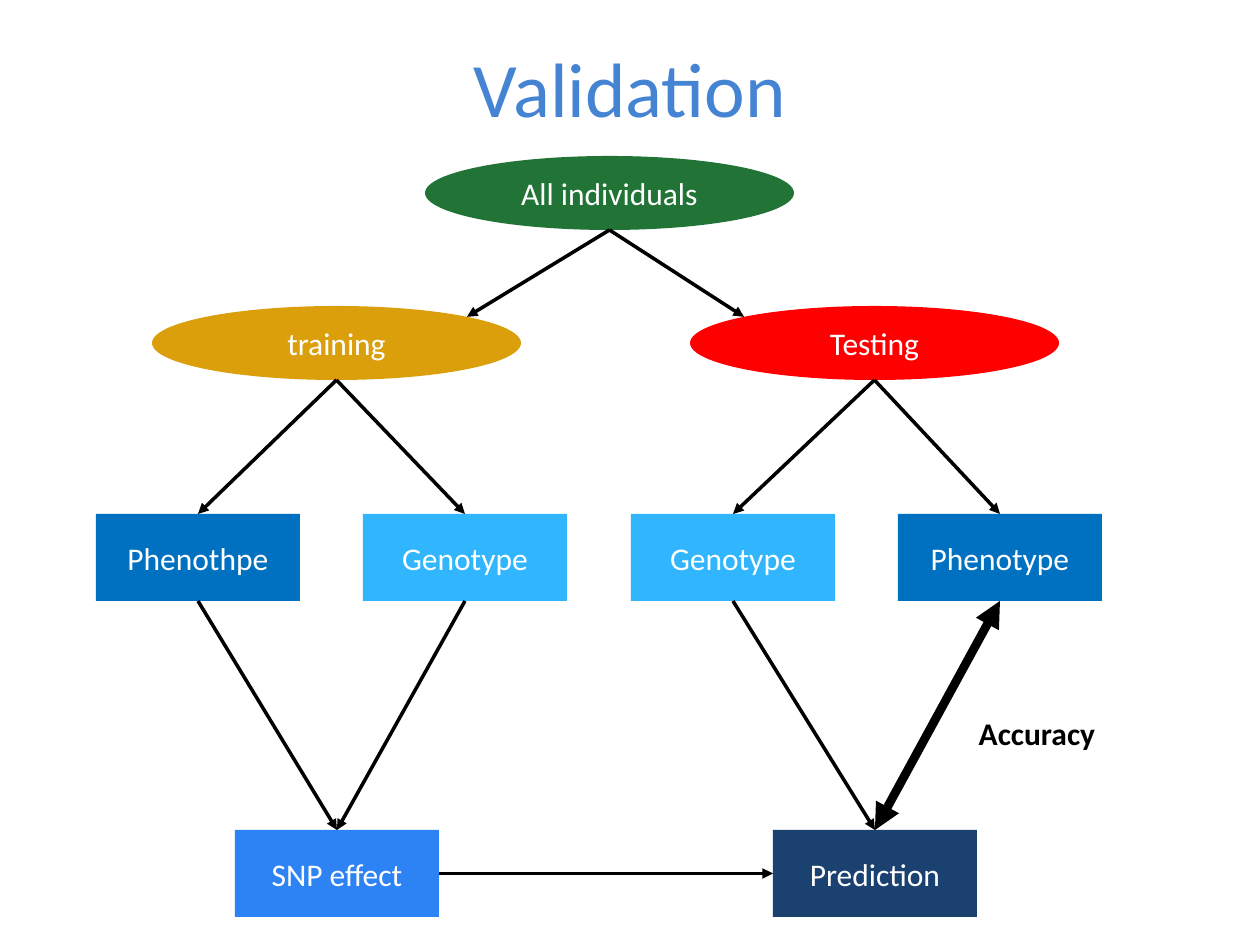
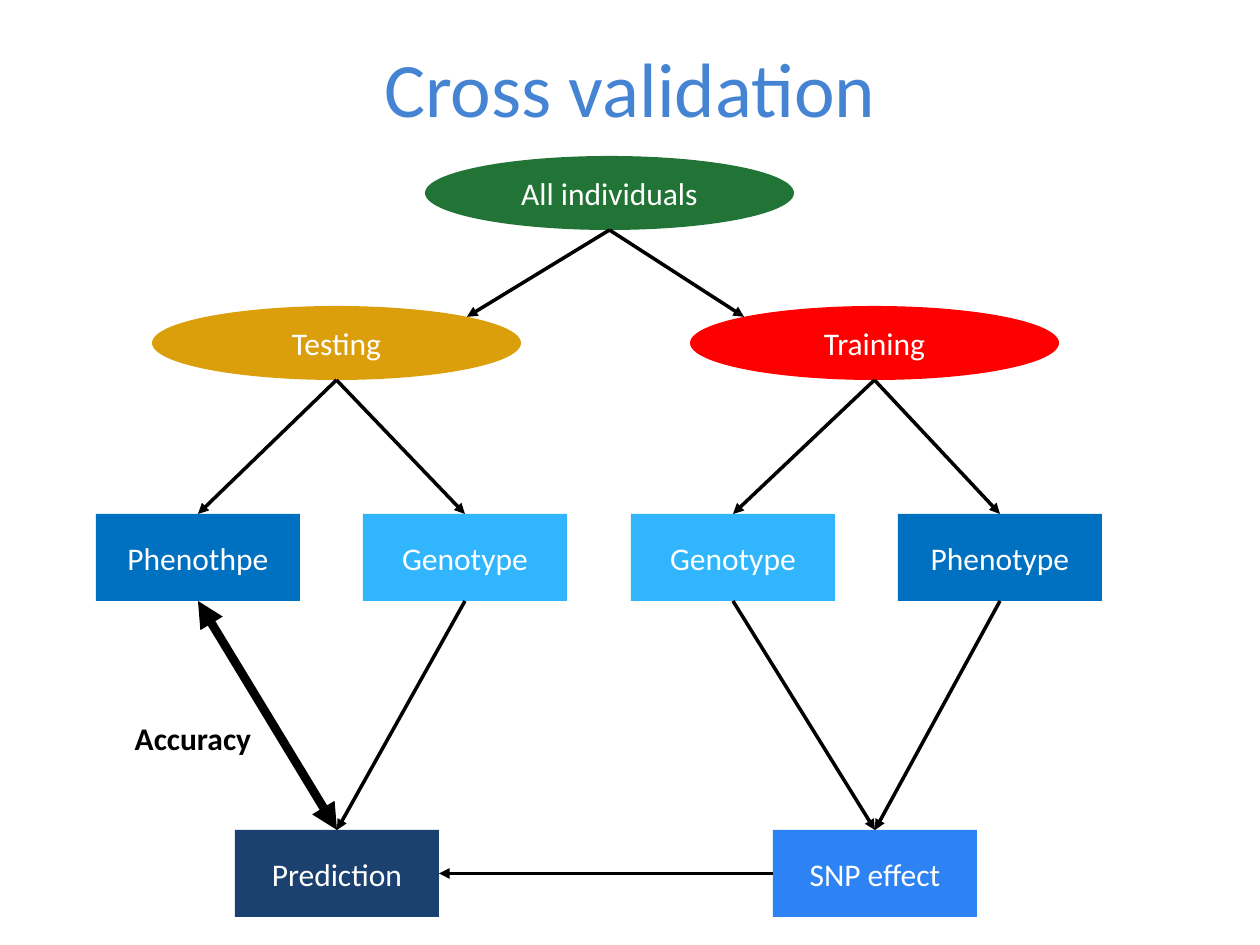
from math import sqrt

from pptx import Presentation
from pptx.dml.color import RGBColor
from pptx.enum.shapes import MSO_CONNECTOR as Link, MSO_SHAPE as Preset
from pptx.enum.text import MSO_ANCHOR as Anchor, PP_ALIGN as Align
from pptx.oxml.ns import qn
from pptx.oxml.xmlchemy import OxmlElement
from pptx.util import Emu, Pt

EMU_PER_PX = 914400 / 126
FONT = "Calibri"
BLACK, WHITE, TITLE_BLUE = "000000", "FFFFFF", "4584D3"
GREEN, GOLD, RED = "217436", "DC9F0C", "FF0000"
PHENOTYPE_BLUE, GENOTYPE_BLUE = "0070C0", "31B6FD"
STEP_FILLS = {"SNP effect": "2D83F4", "Prediction": "1B4171"}

GROUP_SIZE = (369, 74)
BOX_SIZE = (204, 87)
BRANCH_GAP = 538  # from the left branch to the right branch
DATA_PITCH = 267.3  # from one data box to the next
TOP, LEFT, BOTTOM, RIGHT = range(4)


def px(length):
    return Emu(round(length * EMU_PER_PX))


def color(hex_string):
    return RGBColor.from_string(hex_string)


def write(shape, text, size=18, fill=WHITE, bold=False, anchor=Anchor.MIDDLE):
    frame = shape.text_frame
    frame.word_wrap = True
    frame.vertical_anchor = anchor
    paragraph = frame.paragraphs[0]
    paragraph.alignment = Align.CENTER
    run = paragraph.add_run()
    run.text = text
    run.font.name = FONT
    run.font.size = Pt(size)
    run.font.bold = bold
    run.font.color.rgb = color(fill)


def add_label(slide, text, box, **text_format):
    write(slide.shapes.add_textbox(*map(px, box)), text, **text_format)


def add_node(slide, preset, text, position, size, fill):
    node = slide.shapes.add_shape(preset, *map(px, (*position, *size)))
    node.shadow.inherit = False
    node.fill.solid()
    node.fill.fore_color.rgb = color(fill)
    node.line.fill.background()
    write(node, text)
    return node


def add_group(slide, text, x, y, fill):
    return add_node(slide, Preset.OVAL, text, (x, y), GROUP_SIZE, fill)


def add_box(slide, text, x, y, fill):
    return add_node(slide, Preset.RECTANGLE, text, (x, y), BOX_SIZE, fill)


def oval_point(oval, across, down):
    """Point at the given share of the half width and half height from the centre."""
    return (Emu(round(oval.left + oval.width * (1 + across) / 2)),
            Emu(round(oval.top + oval.height * (1 + down) / 2)))


def add_arrow(slide, start, end, width=2, both_ends=False):
    """Each end is either an (x, y) point or a (box, side) pair."""
    arrow = slide.shapes.add_connector(Link.STRAIGHT, 0, 0, 0, 0)
    if isinstance(start[0], int):
        arrow.begin_x, arrow.begin_y = start
    else:
        arrow.begin_connect(*start)
    if isinstance(end[0], int):
        arrow.end_x, arrow.end_y = end
    else:
        arrow.end_connect(*end)
    arrow.line.color.rgb = color(BLACK)
    arrow.line.width = Pt(width)
    properties = arrow._element.spPr
    for tag in ("a:headEnd", "a:tailEnd") if both_ends else ("a:tailEnd",):
        arrowhead = OxmlElement(tag)
        arrowhead.set("type", "triangle")
        properties.find(qn("a:ln")).append(arrowhead)
    properties.append(OxmlElement("a:effectLst"))


def add_validation_slide(deck, title, group_names, step_names, accuracy_at):
    slide = deck.slides.add_slide(deck.slide_layouts[6])
    add_label(slide, title, (63, 0, 1134, 173), size=44, fill=TITLE_BLUE)

    # Individuals and the two groups they are split into
    individuals = add_group(slide, "All individuals", 425, 156, GREEN)
    groups = [add_group(slide, name, 152 + side * BRANCH_GAP, 306, fill)
              for side, (name, fill) in enumerate(zip(group_names, (GOLD, RED)))]

    # Data of each group, then the step that uses it
    data_names = ("Phenothpe", "Genotype", "Genotype", "Phenotype")
    data = [add_box(slide, name, 96 + round(i * DATA_PITCH), 514,
                    GENOTYPE_BLUE if name == "Genotype" else PHENOTYPE_BLUE)
            for i, name in enumerate(data_names)]
    steps = [add_box(slide, name, 235 + side * BRANCH_GAP, 830, STEP_FILLS[name])
             for side, name in enumerate(step_names)]

    # Arrows down each branch; the tested phenotype gets the accuracy arrow
    prediction = step_names.index("Prediction")
    tested_phenotype = data[-prediction]
    diagonal = 1 / sqrt(2)
    for side, (group, step) in enumerate(zip(groups, steps)):
        inward = diagonal if side == 0 else -diagonal
        add_arrow(slide, oval_point(individuals, 0, 1),
                  oval_point(group, inward, -diagonal))
        for box in data[2 * side:2 * side + 2]:
            add_arrow(slide, oval_point(group, 0, 1), (box, TOP))
            measured = box is tested_phenotype
            add_arrow(slide, (box, BOTTOM), (step, TOP),
                      width=5 if measured else 2, both_ends=measured)

    # SNP effect feeds the prediction
    if prediction == 1:
        add_arrow(slide, (steps[0], RIGHT), (steps[1], LEFT))
    else:
        add_arrow(slide, (steps[1], LEFT), (steps[0], RIGHT))
    add_label(slide, "Accuracy", (*accuracy_at, 200, 50), fill=BLACK, bold=True,
              anchor=Anchor.TOP)


def main():
    deck = Presentation()
    deck.slide_width, deck.slide_height = px(1260), px(945)
    add_validation_slide(deck, "Validation", ("training", "Testing"),
                         ("SNP effect", "Prediction"), (937, 708))
    add_validation_slide(deck, "Cross validation", ("Testing", "Training"),
                         ("Prediction", "SNP effect"), (93, 713))
    deck.save("out.pptx")


if __name__ == "__main__":
    main()
